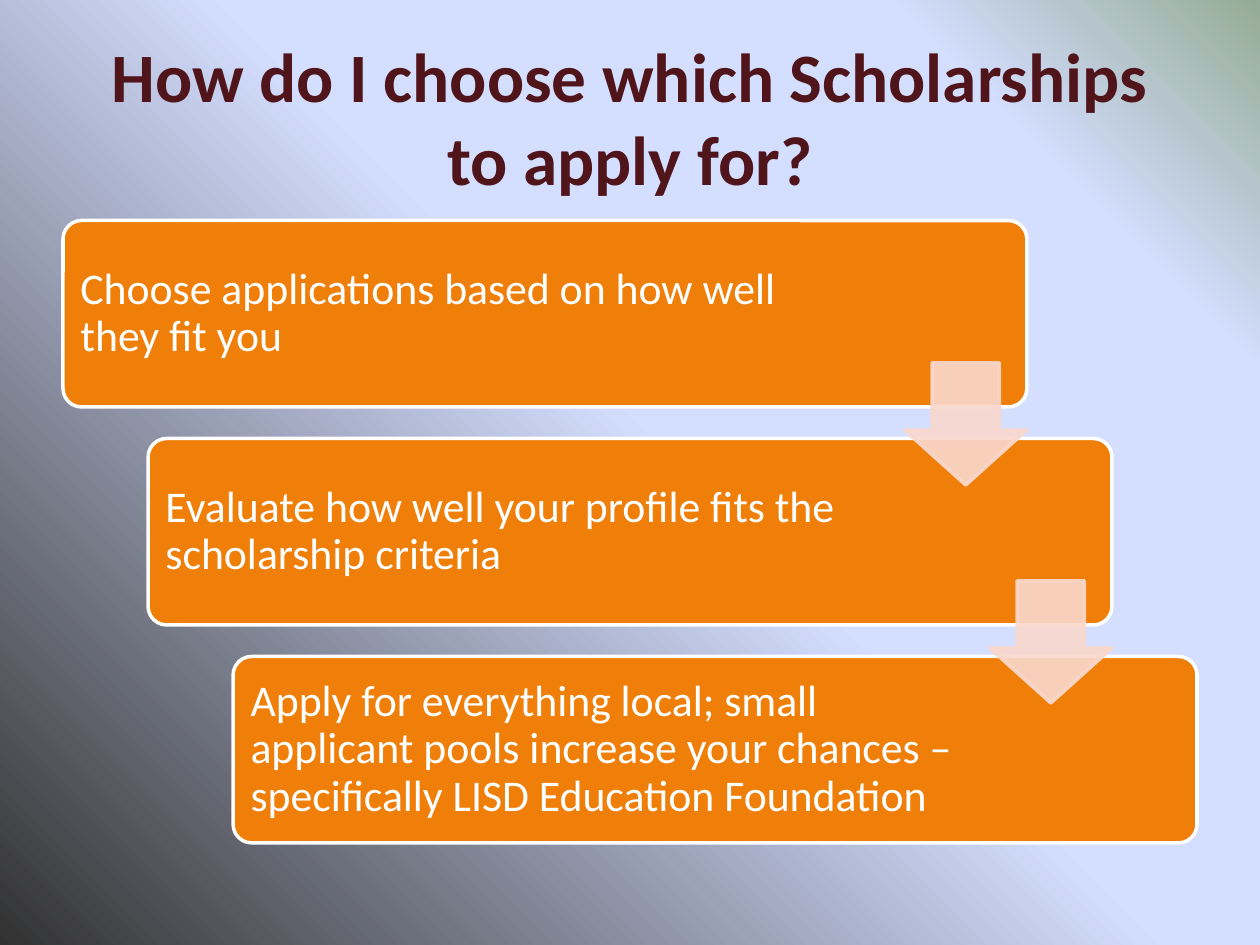
from lxml.etree import SubElement
from pptx import Presentation
from pptx.dml.color import RGBColor
from pptx.enum.shapes import MSO_SHAPE
from pptx.enum.text import MSO_ANCHOR, PP_ALIGN
from pptx.oxml.ns import qn
from pptx.util import Inches, Pt


def paint(color, code, alpha=None):
    color.rgb = RGBColor.from_string(code)
    if alpha:
        for node in color._xFill.iter(qn("a:srgbClr")):
            SubElement(node, qn("a:alpha"), val=str(alpha * 1000))


def write(left, top, width, height, text, size, code):
    box = slide.shapes.add_textbox(Inches(left), Inches(top), Inches(width), Inches(height))
    frame = box.text_frame
    frame.word_wrap = True
    frame.vertical_anchor = MSO_ANCHOR.MIDDLE
    frame.margin_top = frame.margin_bottom = Inches(0.1)
    frame.text = text
    para = frame.paragraphs[0]
    font = para.runs[0].font
    font.name = "Calibri"
    font.size = Pt(size)
    paint(font.color, code)
    return para


deck = Presentation()
deck.slide_width = Inches(10)
deck.slide_height = Inches(7.5)
slide = deck.slides.add_slide(deck.slide_layouts[6])

fill = slide.background.fill
fill.gradient()
fill.gradient_angle = 45
stops = next(slide._element.iter(qn("a:gsLst")))
for old in list(stops):
    stops.remove(old)
for pos, code in [(0, "323232"), (53, "D4DEFF"), (83, "D4DEFF"), (100, "96AB94")]:
    stop = SubElement(stops, qn("a:gs"), pos=str(pos * 1000))
    tint = SubElement(stop, qn("a:srgbClr"), val=code)
    if pos == 0:
        SubElement(tint, qn("a:alpha"), val="97000")

title = write(0.5, 0.3, 9, 1.25, "How do I choose which Scholarships to apply for?", 39.6, "50141B")
title.alignment = PP_ALIGN.CENTER
title.runs[0].font.bold = True

steps = [
    ("Choose applications based on how well they fit you", 6.05),
    ("Evaluate how well your profile fits the scholarship criteria", 5.92),
    ("Apply for everything local; small applicant pools increase your chances – "
     "specifically LISD Education Foundation", 5.92),
]
dx, dy = 0.675, 1.73
cards = [(MSO_SHAPE.ROUNDED_RECTANGLE, 0.5 + i * dx, 1.75 + i * dy, 7.65, 1.48,
          [0.1], "F07F09", "FFFFFF", None) for i in range(3)]
arrows = [(MSO_SHAPE.DOWN_ARROW, 7.18 + i * dx, 2.88 + i * dy, 0.97, 0.97,
           [0.55, 0.45], "F9D8CC", "F9D8CC", 90) for i in range(2)]

for i, (kind, left, top, width, height, bends, face, edge, alpha) in enumerate(cards + arrows):
    shape = slide.shapes.add_shape(kind, Inches(left), Inches(top), Inches(width), Inches(height))
    shape.shadow.inherit = False
    for n, bend in enumerate(bends):
        shape.adjustments[n] = bend
    shape.fill.solid()
    paint(shape.fill.fore_color, face, alpha)
    shape.line.width = Pt(2)
    paint(shape.line.color, edge, alpha)
    if i < len(steps):
        text, wide = steps[i]
        para = write(left + 0.04, top + 0.04, wide, 1.4, text, 25, "FFFFFF")
        para.line_spacing = 0.9

deck.save("out.pptx")
